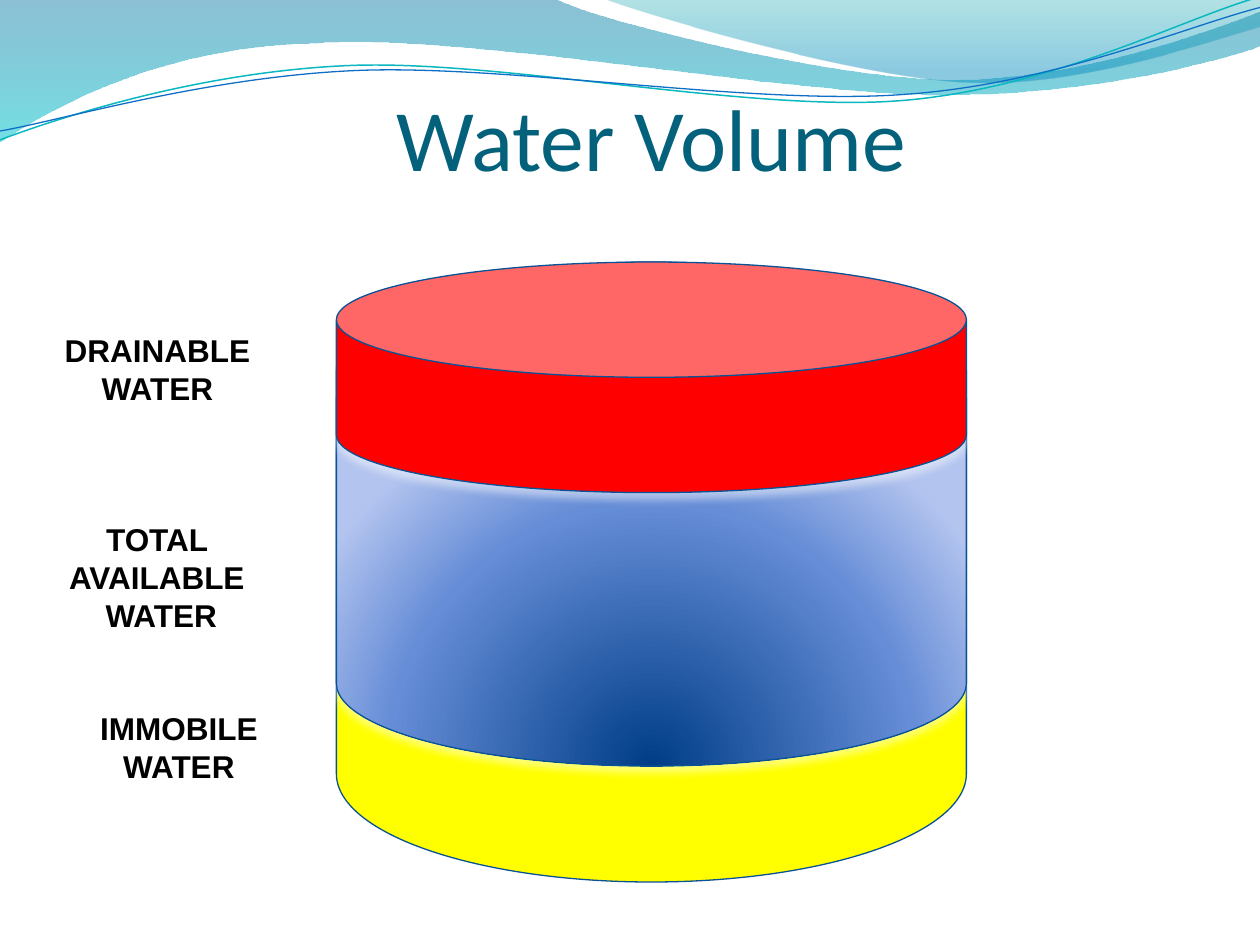
from math import cos, radians, sin

from lxml import etree
from pptx import Presentation
from pptx.dml.color import RGBColor
from pptx.enum.shapes import MSO_SHAPE as Shape
from pptx.enum.text import MSO_ANCHOR as Anchor, MSO_AUTO_SIZE as AutoSize, PP_ALIGN as Align
from pptx.oxml import parse_xml
from pptx.oxml.ns import nsdecls, qn
from pptx.util import Inches, Pt

COLORS = {
    "title": "04617B", "text": "000000", "outline": "095295", "glow": "FFFFFF",
    "immobile": "FFFF00", "drainable": "FF0000",
    "deep": "003D87", "mid": "668DD7", "pale": "B3C4EF",
    "wave_blue": "0074A1", "wave_teal": "00C6CF",
    "crest_teal": "00A1A9", "crest_blue": "008BBF",
    "teal_line": "0AB8BF", "blue_line": "0F6FC6",
}
DOWNWARD = '<a:lin ang="5400000" scaled="1"/>'
FROM_BASE = '<a:path path="circle"><a:fillToRect l="50000" t="130000" r="50000" b="-30000"/></a:path>'
TILT = 2.7

WAVES = [
    ([(0, 0), (4.4, -0.01), (4.76, 0.17, 6.64, 0.63, 7.58, 0.63),
      (8.53, 0.63, 9.58, 0.26, 10, 0.09), (10.01, 0.36),
      (9.83, 0.44, 8.7, 0.76, 7.46, 0.75), (6.22, 0.75, 3.82, 0.28, 2.57, 0.34),
      (1.29, 0.36, 0.46, 0.83, -0.01, 1.13), (0, 0)],
     [(0, "wave_blue", 45), (100, "wave_teal", 55)]),
    ([(4.79, -0.01), (5.09, 0.11, 6.82, 0.62, 7.69, 0.65),
      (8.56, 0.69, 9.61, 0.32, 10, 0.21), (10, 0), (4.79, -0.01)],
     [(0, "crest_teal", 30), (80, "crest_blue", 45)]),
]
RIPPLES = [
    ([(0, 1.11), (0.48, 0.93, 1.58, 0.57, 2.77, 0.52),
      (3.95, 0.47, 5.93, 0.89, 7.13, 0.8), (8.33, 0.71, 9.38, 0.15, 9.98, -0.02)],
     (4.99, 0.58), "teal_line", 0.85),
    ([(0, 1.04), (0.47, 0.96, 1.64, 0.61, 2.83, 0.56),
      (4.03, 0.51, 5.97, 0.84, 7.17, 0.75), (8.36, 0.67, 9.41, 0.21, 10, 0.06)],
     (5, 0.59), "blue_line", 0.75),
]
WATER_STOPS = [(0, "deep", 100), (68, "mid", 100), (100, "pale", 100)]
LAYERS = [
    (2.08, 4.92, 0.349, "immobile"),
    (2.5, 3.58, 0.367, WATER_STOPS),
    (2.08, 1.83, 0.5, "drainable"),
]
LABELS = [
    (0, 2.58, 0.71, ["DRAINABLE WATER"]),
    (0.03, 4.08, 1.01, ["TOTAL ", "AVAILABLE  WATER"]),
    (0.17, 5.58, 0.71, ["IMMOBILE", "WATER"]),
]


def color(name):
    return RGBColor.from_string(COLORS[name])


def pairs(segment):
    return list(zip(segment[::2], segment[1::2]))


def turn(segment, center):
    angle = radians(TILT)
    turned = []
    for x, y in pairs(segment):
        across, down = x - center[0], y - center[1]
        turned += [center[0] + across * cos(angle) - down * sin(angle),
                   center[1] + across * sin(angle) + down * cos(angle)]
    return turned


def add_curve(slide, segments, close):
    points = [(Inches(x), Inches(y)) for segment in segments for x, y in pairs(segment)]
    builder = slide.shapes.build_freeform(*points[0])
    builder.add_line_segments(points[1:], close=close)
    shape = builder.convert_to_shape()
    lines = iter(list(shape._element.spPr.iter(qn("a:lnTo"))))
    for segment in segments[1:]:
        steps = [next(lines) for pair in pairs(segment)]
        if len(steps) == 3:
            bezier = etree.Element(qn("a:cubicBezTo"))
            steps[0].addprevious(bezier)
            for step in steps:
                bezier.append(step[0])
                step.getparent().remove(step)
    shape.shadow.inherit = False
    shape.fill.background()
    shape.line.fill.background()
    return shape


def set_gradient(shape, stops, direction):
    shape.fill.background()
    properties = shape._element.spPr
    marks = "".join(
        f'<a:gs pos="{position * 1000}"><a:srgbClr val="{COLORS[name]}">'
        f'<a:alpha val="{alpha * 1000}"/></a:srgbClr></a:gs>'
        for position, name, alpha in stops)
    gradient = parse_xml(f'<a:gradFill {nsdecls("a")} rotWithShape="1">'
                         f'<a:gsLst>{marks}</a:gsLst>{direction}</a:gradFill>')
    properties.replace(properties.find(qn("a:noFill")), gradient)


def set_line(shape, name, width):
    shape.line.color.rgb = color(name)
    shape.line.width = Pt(width)


def add_ripple(slide, segments, center, name, width):
    ripple = add_curve(slide, [turn(segment, center) for segment in segments], False)
    ripple.rotation = -TILT
    set_line(ripple, name, width)


def add_glow(shape):
    shape.shadow.inherit = False
    effects = shape._element.spPr.find(qn("a:effectLst"))
    glow = etree.SubElement(effects, qn("a:outerShdw"), blurRad=str(Pt(4.5)),
                            dist=str(Pt(3)), dir="5400000", rotWithShape="0")
    tone = etree.SubElement(glow, qn("a:srgbClr"), val=COLORS["glow"])
    etree.SubElement(tone, qn("a:alpha"), val="48000")


def add_text(paragraph, text, font, size, name, bold):
    paragraph.alignment = Align.CENTER
    run = paragraph.add_run()
    run.text = text
    run.font.name = font
    run.font.size = Pt(size)
    run.font.bold = bold
    run.font.color.rgb = color(name)


def add_title(slide, text):
    title = slide.shapes.title
    slide.shapes._spTree.append(title._element)
    title.left, title.top, title.width, title.height = map(Inches, (0.67, 0.25, 9, 1.25))
    frame = title.text_frame
    frame.vertical_anchor = Anchor.BOTTOM
    frame.margin_left = frame.margin_right = frame.margin_bottom = 0
    frame.margin_top = Inches(0.05)
    add_text(frame.paragraphs[0], text, "Calibri", 50, "title", False)


def add_layer(slide, top, height, curve, fill):
    can = slide.shapes.add_shape(Shape.CAN, Inches(2.67), Inches(top), Inches(5), Inches(height))
    can.adjustments[0] = curve
    if isinstance(fill, str):
        can.fill.solid()
        can.fill.fore_color.rgb = color(fill)
    else:
        set_gradient(can, fill, FROM_BASE)
    set_line(can, "outline", 0.75)
    add_glow(can)


def add_label(slide, left, top, height, lines):
    box = slide.shapes.add_textbox(Inches(left), Inches(top), Inches(2.5), Inches(height))
    frame = box.text_frame
    frame.word_wrap = True
    frame.auto_size = AutoSize.SHAPE_TO_FIT_TEXT
    for index, line in enumerate(lines):
        paragraph = frame.add_paragraph() if index else frame.paragraphs[0]
        add_text(paragraph, line, "Arial", 18, "text", True)


def main():
    presentation = Presentation()
    presentation.slide_width = Inches(10)
    presentation.slide_height = Inches(7.5)
    slide = presentation.slides.add_slide(presentation.slide_layouts[5])
    for segments, stops in WAVES:
        set_gradient(add_curve(slide, segments, True), stops, DOWNWARD)
    for ripple in RIPPLES:
        add_ripple(slide, *ripple)
    add_title(slide, "Water Volume")
    for layer in LAYERS:
        add_layer(slide, *layer)
    for label in LABELS:
        add_label(slide, *label)
    presentation.save("out.pptx")


if __name__ == "__main__":
    main()
